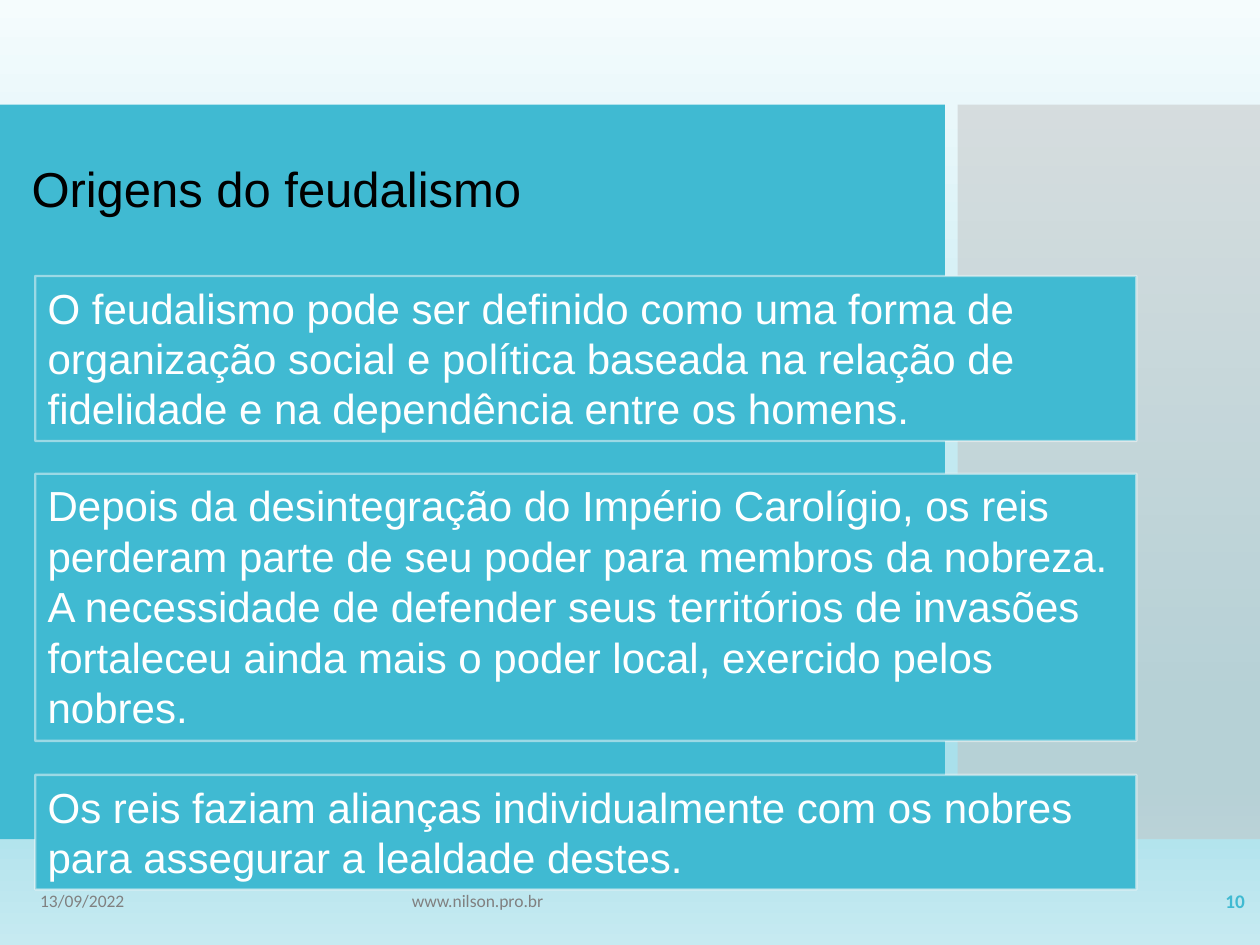
from dataclasses import dataclass

from lxml.etree import SubElement
from pptx import Presentation
from pptx.dml.color import RGBColor
from pptx.enum.shapes import MSO_SHAPE as Preset
from pptx.enum.text import MSO_ANCHOR as Anchor, MSO_AUTO_SIZE as AutoSize, PP_ALIGN as Align
from pptx.oxml.ns import qn
from pptx.util import Inches, Pt

TURQUOISE = RGBColor(0x40, 0xBA, 0xD2)
SILVER = RGBColor(0xC3, 0xC3, 0xC3)
GRAY = RGBColor(0x80, 0x80, 0x80)
OUTLINE = RGBColor(0xF9, 0xF9, 0xF9)
WHITE = RGBColor(0xFF, 0xFF, 0xFF)
BLACK = RGBColor(0x00, 0x00, 0x00)
ICE = RGBColor(0xF5, 0xFC, 0xFD)
AQUA = RGBColor(0xA9, 0xE0, 0xEB)
MIST = RGBColor(0xC6, 0xEA, 0xF1)
BACKGROUND_STOPS = [(0, ICE), (74, AQUA), (83, AQUA), (100, MIST)]


@dataclass
class Box:
    left: float
    top: float
    width: float
    height: float

    def lengths(self):
        return [Inches(value) for value in (self.left, self.top, self.width, self.height)]


@dataclass
class Statement:
    top: float
    height: float
    text: str


@dataclass
class FooterItem:
    box: Box
    text: str
    size: int = 10
    color: RGBColor = GRAY
    bold: bool = False
    align: Align = Align.LEFT


STATEMENTS = [
    Statement(2.19, 1.31, "O feudalismo pode ser definido como uma forma de organização social e "
              "política baseada na relação de fidelidade e na dependência entre os homens."),
    Statement(3.76, 2.12, "Depois da desintegração do Império Carolígio, os reis perderam parte de "
              "seu poder para membros da nobreza. A necessidade de defender seus territórios de "
              "invasões fortaleceu ainda mais o poder local, exercido pelos nobres."),
    Statement(6.15, 0.91, "Os reis faziam alianças individualmente com os nobres para assegurar a "
              "lealdade destes."),
]
FOOTER = [
    FooterItem(Box(0.22, 6.95, 2.25, 0.4), "13/09/2022"),
    FooterItem(Box(3.17, 6.95, 4.85, 0.4), "www.nilson.pro.br"),
    FooterItem(Box(8.72, 6.95, 1.26, 0.4), "10", 11, TURQUOISE, True, Align.RIGHT),
]


def write(paragraph, text: str, *, size: float, color: RGBColor, font: str = "Arial",
          bold: bool = False, align: Align = Align.LEFT) -> None:
    paragraph.alignment = align
    run = paragraph.add_run()
    run.text = text
    run.font.name = font
    run.font.size = Pt(size)
    run.font.bold = bold
    run.font.color.rgb = color


def set_opacity(fill_parent, percent: int) -> None:
    color = fill_parent.find(qn("a:solidFill")).find(qn("a:srgbClr"))
    SubElement(color, qn("a:alpha"), val=str(percent * 1000))


def paint_background(slide) -> None:
    fill = slide.background.fill
    fill.gradient()
    fill.gradient_angle = 270
    stop_list = slide._element.find(".//" + qn("a:gsLst"))
    for stop in list(stop_list):
        stop_list.remove(stop)
    for position, color in BACKGROUND_STOPS:
        stop = SubElement(stop_list, qn("a:gs"), pos=str(position * 1000))
        SubElement(stop, qn("a:srgbClr"), val=str(color))


def add_rectangle(slide, box: Box, color: RGBColor):
    shape = slide.shapes.add_shape(Preset.RECTANGLE, *box.lengths())
    shape.shadow.inherit = False
    shape.fill.solid()
    shape.fill.fore_color.rgb = color
    shape.line.fill.background()
    return shape


def place_title(slide) -> None:
    title = slide.shapes.title
    title.left, title.top, title.width, title.height = Box(0.15, 1.21, 4.14, 0.57).lengths()
    frame = title.text_frame
    frame.auto_size = AutoSize.NONE
    frame.word_wrap = False
    frame.vertical_anchor = Anchor.TOP
    write(frame.paragraphs[0], "Origens do feudalismo", size=28, color=BLACK)
    slide.shapes._spTree.append(title._element)


def add_statement(slide, statement: Statement) -> None:
    shape = add_rectangle(slide, Box(0.28, statement.top, 8.74, statement.height), TURQUOISE)
    shape.line.color.rgb = OUTLINE
    shape.line.width = Pt(1.35)
    set_opacity(shape._element.spPr.find(qn("a:ln")), 50)
    frame = shape.text_frame
    frame.word_wrap = True
    frame.vertical_anchor = Anchor.TOP
    write(frame.paragraphs[0], statement.text, size=24, color=WHITE)


def add_footer_item(slide, item: FooterItem) -> None:
    frame = slide.shapes.add_textbox(*item.box.lengths()).text_frame
    frame.word_wrap = True
    frame.vertical_anchor = Anchor.MIDDLE
    write(frame.paragraphs[0], item.text, size=item.size, color=item.color,
          font="Calibri", bold=item.bold, align=item.align)


def main() -> None:
    presentation = Presentation()
    presentation.slide_width = Inches(10)
    presentation.slide_height = Inches(7.5)
    slide = presentation.slides.add_slide(presentation.slide_layouts[5])
    paint_background(slide)
    add_rectangle(slide, Box(0, 0.83, 7.5, 5.83), TURQUOISE)
    side_panel = add_rectangle(slide, Box(7.6, 0.83, 2.4, 5.83), SILVER)
    set_opacity(side_panel._element.spPr, 50)
    place_title(slide)
    for statement in STATEMENTS:
        add_statement(slide, statement)
    for item in FOOTER:
        add_footer_item(slide, item)
    presentation.save("out.pptx")


if __name__ == "__main__":
    main()
